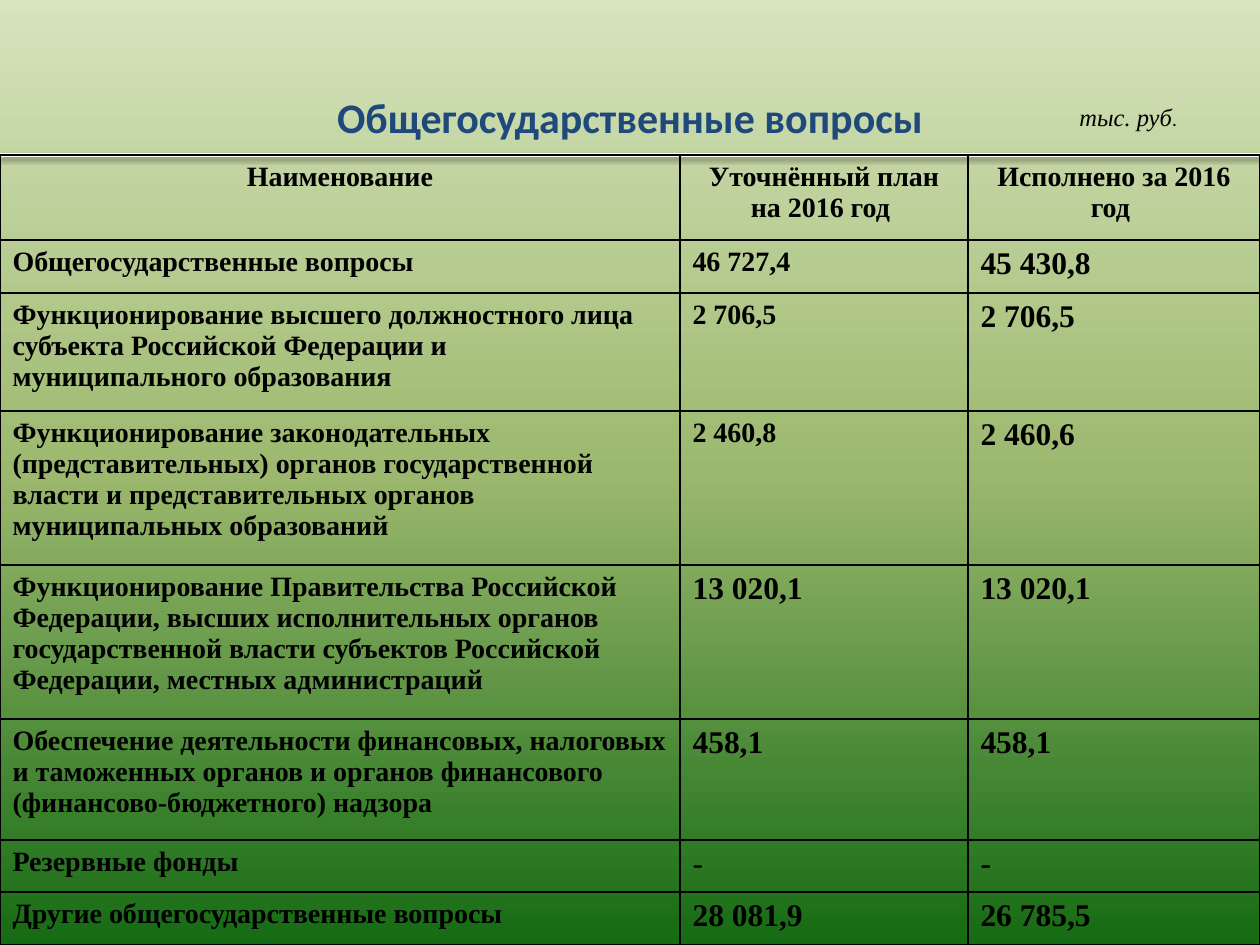
from dataclasses import dataclass

from lxml.etree import SubElement
from pptx import Presentation
from pptx.dml.color import RGBColor as Rgb
from pptx.enum.shapes import MSO_CONNECTOR as Conn
from pptx.enum.text import MSO_ANCHOR as Anchor, PP_ALIGN as Align
from pptx.oxml import parse_xml
from pptx.oxml.ns import nsdecls, qn
from pptx.util import Pt

SCALE = 914400 / 126


@dataclass(frozen=True)
class Theme:
    ink: str = "000000"
    head: str = "1F497D"
    rule: str = "FFFFFF"
    sky: tuple = ((0, "D7E4BD"), (50, "9CB86E"), (100, "156B13"))
    serif: str = "Times New Roman"
    sans: str = "Calibri"
    title: int = 24
    big: int = 18
    body: int = 16
    unit: int = 14
    dot: int = 11


@dataclass(frozen=True)
class Row:
    high: int
    name: str
    plan: str
    done: str
    size: int = Theme.big
    bold: bool = True


THEME = Theme()
WIDE, HIGH, TOP = 1260, 945, 155
COLS = (680, 288, 292)
HEAD = Row(85, "Наименование", "Уточнённый план на 2016 год ",
           "Исполнено за 2016 год ")
ROWS = (
    Row(53, "Общегосударственные вопросы", "46 727,4", "45 430,8", THEME.body),
    Row(118, "Функционирование высшего должностного лица субъекта Российской "
        "Федерации и муниципального образования", "2 706,5", "2 706,5", THEME.body),
    Row(154, "Функционирование законодательных (представительных) органов "
        "государственной власти и представительных органов муниципальных "
        "образований", "2 460,8", "2 460,6", THEME.body),
    Row(154, "Функционирование Правительства Российской Федерации, высших "
        "исполнительных органов государственной власти субъектов Российской "
        "Федерации, местных администраций", "13 020,1", "13 020,1"),
    Row(121, "Обеспечение деятельности финансовых, налоговых и таможенных органов "
        "и органов финансового (финансово-бюджетного) надзора", "458,1", "458,1"),
    Row(52, "Резервные фонды", "-", "-", bold=False),
    Row(53, "Другие общегосударственные вопросы", "28 081,9", "26 785,5"),
)


def px(num: int) -> int:
    return round(num * SCALE)


def style(run, size: int, face: str, tint: str, bold=False, slant=False) -> None:
    font = run.font
    font.size, font.name, font.bold, font.italic = Pt(size), face, bold, slant
    font.color.rgb = Rgb.from_string(tint)


def paint(slide) -> None:
    slide.background.fill.gradient()
    grad = slide.background._cSld.find(".//" + qn("a:gradFill"))
    stops = "".join(f'<a:gs pos="{pos * 1000}"><a:srgbClr val="{tint}"/></a:gs>'
                    for pos, tint in THEME.sky)
    grad.getparent().replace(grad, parse_xml(
        f'<a:gradFill {nsdecls("a")} rotWithShape="1"><a:gsLst>{stops}</a:gsLst>'
        '<a:lin ang="5400000" scaled="0"/></a:gradFill>'))


def add_rule(slide) -> None:
    line = slide.shapes.add_connector(Conn.STRAIGHT, px(WIDE), px(TOP), 0, px(TOP))
    line.line.width = Pt(2)
    line.line.color.rgb = Rgb.from_string(THEME.rule)
    line._element.spPr.append(parse_xml(
        f'<a:effectLst {nsdecls("a")}><a:outerShdw blurRad="{Pt(3.1)}" '
        f'dist="{Pt(1.6)}" dir="5400000" rotWithShape="0"><a:srgbClr '
        f'val="{THEME.ink}"><a:alpha val="38000"/></a:srgbClr></a:outerShdw>'
        '</a:effectLst>'))


def edge(cell) -> None:
    props = cell._tc.get_or_add_tcPr()
    for spot, side in enumerate(("a:lnL", "a:lnR", "a:lnT", "a:lnB")):
        line = SubElement(props, qn(side), w=str(Pt(1)))
        fill = SubElement(line, qn("a:solidFill"))
        SubElement(fill, qn("a:srgbClr"), val=THEME.ink)
        props.insert(spot, line)


def put(cell, text: str, size: int, bold=True, align=Align.LEFT) -> None:
    cell.fill.background()
    edge(cell)
    cell.text_frame.text = text
    para = cell.text_frame.paragraphs[0]
    para.alignment = align
    style(para.runs[0], size, THEME.serif, THEME.ink, bold)


def add_grid(slide) -> None:
    rows = (HEAD,) + ROWS
    grid = slide.shapes.add_table(len(rows), len(COLS), 0, px(TOP), px(WIDE),
                                  px(sum(row.high for row in rows))).table
    grid.first_row = grid.horz_banding = False
    for col, wide in zip(grid.columns, COLS):
        col.width = px(wide)
    for line, row in zip(grid.rows, rows):
        line.height = px(row.high)
        name, plan, done = line.cells
        if row is HEAD:
            for cell, text in zip(line.cells, (row.name, row.plan, row.done)):
                put(cell, text, THEME.body, align=Align.CENTER)
        else:
            put(name, row.name, THEME.body)
            put(plan, row.plan, row.size, row.bold)
            put(done, row.done, THEME.big)


def add_unit(slide) -> None:
    box = slide.shapes.add_textbox(px(1067), px(96), px(179), px(49))
    box.text_frame.word_wrap = True
    para = box.text_frame.paragraphs[0]
    para.text = "тыс. руб"
    style(para.runs[0], THEME.unit, THEME.serif, THEME.ink, slant=True)
    dot = para.add_run()
    dot.text = "."
    style(dot, THEME.dot, THEME.sans, THEME.ink)


def set_title(slide) -> None:
    title = slide.shapes.title
    title.left, title.top, title.width, title.height = map(px, (63, 38, 1134, 158))
    frame = title.text_frame
    frame.text = "Общегосударственные вопросы"
    frame.vertical_anchor = Anchor.MIDDLE
    para = frame.paragraphs[0]
    para.alignment = Align.CENTER
    style(para.runs[0], THEME.title, THEME.sans, THEME.head, bold=True)
    slide.shapes._spTree.append(title._element)


def main() -> None:
    deck = Presentation()
    deck.slide_width, deck.slide_height = px(WIDE), px(HIGH)
    slide = deck.slides.add_slide(deck.slide_layouts[5])
    paint(slide)
    add_rule(slide)
    add_grid(slide)
    add_unit(slide)
    set_title(slide)
    deck.save("out.pptx")


if __name__ == "__main__":
    main()
